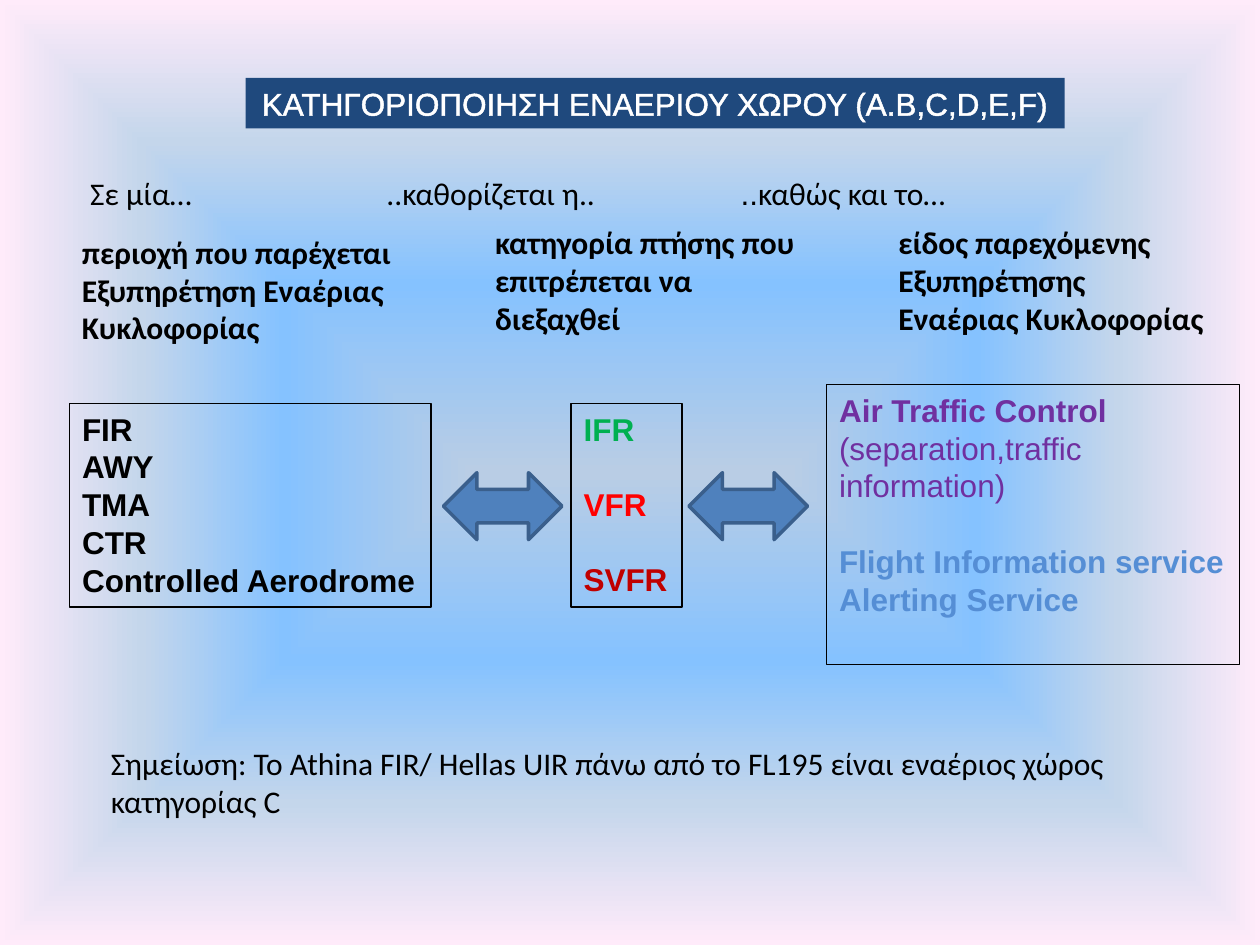
from pptx import Presentation
from pptx.dml.color import RGBColor
from pptx.enum.shapes import MSO_SHAPE
from pptx.enum.text import MSO_ANCHOR, MSO_AUTO_SIZE, PP_ALIGN
from pptx.oxml import parse_xml
from pptx.oxml.ns import nsdecls, qn
from pptx.util import Cm, Pt

ARROW = MSO_SHAPE.LEFT_RIGHT_ARROW
TOP, FIXED = MSO_ANCHOR.TOP, MSO_AUTO_SIZE.NONE
LEFT, CENTER = PP_ALIGN.LEFT, PP_ALIGN.CENTER
BLACK, PURPLE, BLUE = "000000", "7030A0", "558ED5"
LINE = 21.5  # height of one line of text in points
rgb = RGBColor.from_string


def place(sp, box, wrap=True):
    sp.left, sp.top, sp.width, sp.height = [Cm(v) for v in box]
    tf = sp.text_frame
    tf.auto_size, tf.vertical_anchor, tf.word_wrap = FIXED, TOP, wrap
    return tf


def write(p, text, font="Calibri", color=BLACK, bold=False, align=LEFT, before=0):
    p.alignment, p.space_before = align, Pt(before)
    r = p.add_run()
    r.text = text
    r.font.name, r.font.size, r.font.bold = font, Pt(18), bold
    r.font.color.rgb = rgb(color)
    return r


prs = Presentation()
prs.slide_width, prs.slide_height = Cm(25.4), Cm(19.05)
s = prs.slides.add_slide(prs.slide_layouts[4])

# Background: rectangular gradient from the centre outwards
s.background.fill.gradient()
stops = [(0, "B9CDE5"), (40, "85C2FF"), (70, "C4D6EB"), (100, "FFEBFA")]
gs = "".join(f'<a:gs pos="{pos * 1000}"><a:srgbClr val="{c}"/></a:gs>' for pos, c in stops)
grad = next(s.element.iter(qn("a:gradFill")))
grad.getparent().replace(grad, parse_xml(
    f'<a:gradFill {nsdecls("a")} rotWithShape="1"><a:gsLst>{gs}</a:gsLst><a:path path="shape">'
    '<a:fillToRect l="50000" t="50000" r="50000" b="50000"/></a:path></a:gradFill>'))

# Title banner with outlined letters
title = s.shapes.title
title.fill.solid()
title.fill.fore_color.rgb = rgb("1F497D")
tf = place(title, (4.95, 1.57, 16.51, 1.02))
r = write(tf.paragraphs[0], "ΚΑΤΗΓΟΡΙΟΠΟΙΗΣΗ ΕΝΑΕΡΙΟΥ ΧΩΡΟΥ (A.B,C,D,E,F)",
          font="Arial", color="FFFFFF", align=CENTER)
r.font._element.insert(0, parse_xml(
    f'<a:ln {nsdecls("a")} w="18415"><a:solidFill><a:srgbClr val="FFFFFF"/></a:solidFill></a:ln>'))

# Lead-in phrases
leads = [
    (1.57, 2.64, [("Σε μία…", "Calibri")]),
    (7.54, 4.78, [("..καθορίζεται η..", "Calibri")]),
    (14.68, 4.67, [("..", "Arial"), ("καθώς και το…", "Calibri")]),
]
for x, w, runs in leads:
    tf = place(s.shapes.add_textbox(0, 0, 0, 0), (x, 3.38, w, 1.02), wrap=False)
    for text, font in runs:
        write(tf.paragraphs[0], text, font=font)

# Column headings
headings = [
    ((1.4, 4.57, 7.34, 2.57), ["περιοχή που παρέχεται", "Εξυπηρέτηση Εναέριας Κυκλοφορίας"]),
    ((9.73, 4.37, 6.76, 2.57), ["κατηγορία πτήσης που επιτρέπεται να διεξαχθεί"]),
    ((17.86, 4.37, 6.76, 2.57), ["είδος παρεχόμενης", "Εξυπηρέτησης Εναέριας Κυκλοφορίας"]),
]
for box, lines in headings:
    tf = place(s.shapes.add_textbox(0, 0, 0, 0), box)
    for i, text in enumerate(lines):
        write(tf.add_paragraph() if i else tf.paragraphs[0], text, bold=True)

# Framed lists and the note: box, framed, wrap, lines (text, colour, bold, space before)
areas = ["FIR", "AWY", "TMA", "CTR", "Controlled Aerodrome"]
bodies = [
    ((1.4, 8.13, 7.29, 4.11), True, False, [(a, BLACK, True, 0) for a in areas]),
    ((11.51, 8.13, 2.24, 4.11), True, False, [
        ("IFR", "00B050", True, 0),
        ("VFR", "FF0000", True, LINE),
        ("SVFR", "C00000", True, LINE)]),
    ((16.66, 7.75, 8.33, 5.64), True, True, [
        ("Air Traffic Control", PURPLE, True, 0),
        ("(separation,traffic information)", PURPLE, False, 0),
        ("Flight Information service", BLUE, True, LINE),
        ("Alerting Service", BLUE, True, 0)]),
    ((1.98, 14.88, 21.29, 1.8), False, True, [
        ("Σημείωση: Το Athina FIR/ Hellas UIR πάνω από το FL195 είναι "
         "εναέριος χώρος κατηγορίας C", BLACK, False, 0)]),
]
for sp, (box, framed, wrap, lines) in zip(list(s.placeholders)[1:], bodies):
    tf = place(sp, box, wrap)
    if framed:
        sp.line.color.rgb = rgb(BLACK)
        sp.line.width = Pt(0.75)
    for i, (text, color, bold, before) in enumerate(lines):
        p = tf.add_paragraph() if i else tf.paragraphs[0]
        write(p, text, font="Arial" if framed else "Calibri",
              color=color, bold=bold, before=before)
        pPr = p._p.get_or_add_pPr()
        pPr.set("marL", "0")
        pPr.set("indent", "0")
        pPr.append(parse_xml(f'<a:buNone {nsdecls("a")}/>'))

# Double arrows between the lists
for x in (8.94, 13.89):
    sp = s.shapes.add_shape(ARROW, Cm(x), Cm(9.53), Cm(2.39), Cm(1.35))
    sp.shadow.inherit = False
    sp.fill.solid()
    sp.fill.fore_color.rgb = rgb("4F81BD")
    sp.line.color.rgb = rgb("3A5F8C")
    sp.line.width = Pt(2)

prs.save("out.pptx")
